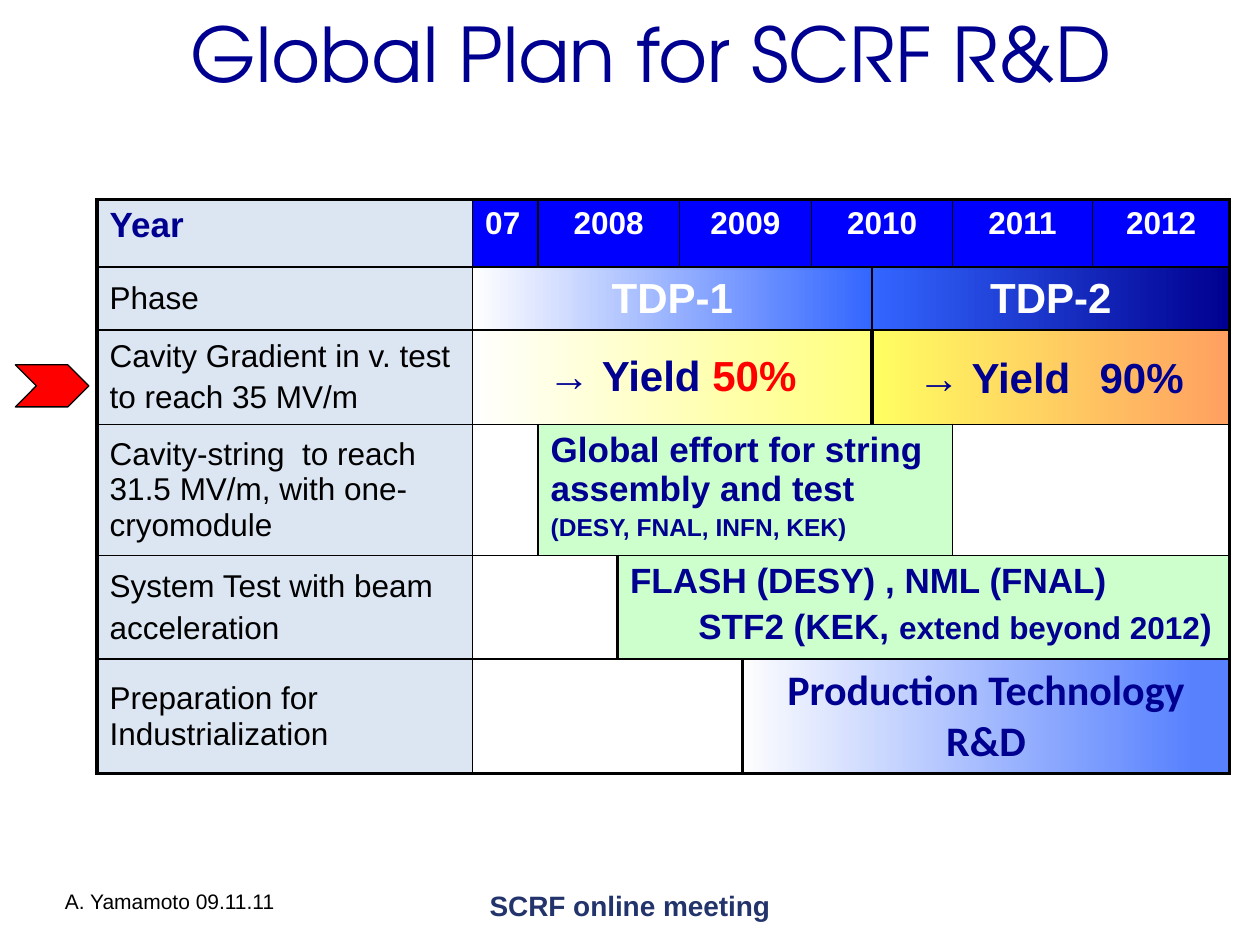
import pptx
import pptx.dml.color
import pptx.enum.shapes
import pptx.enum.text
import pptx.oxml.ns
import pptx.util
import lxml.etree

Pt = pptx.util.Pt
ALIGN = pptx.enum.text.PP_ALIGN
ANCHOR = pptx.enum.text.MSO_ANCHOR
SHAPE = pptx.enum.shapes.MSO_SHAPE
qn = pptx.oxml.ns.qn

COLORS = {
    "navy": "000090", "black": "000000", "white": "FFFFFF", "red": "FF0000",
    "label": "DCE6F2", "year": "0000FF", "azure": "3366FF", "green": "CCFFCC",
    "yellow": "FFFF00", "orange": "FF6600", "footer": "23346C",
}


class Deck:
    """Hold the style and the current slide, and draw its elements."""

    font = "Arial"
    thin, thick = 1, 2.25

    def __init__(self, width, height):
        self.prs = pptx.Presentation()
        self.prs.slide_width, self.prs.slide_height = Pt(width), Pt(height)
        self.s = self.prs.slides.add_slide(self.prs.slide_layouts[6])

    def rgb(self, name):
        return pptx.dml.color.RGBColor.from_string(COLORS[name])

    def add_runs(self, tf, paragraphs, align=ALIGN.LEFT, font=None, indent=0):
        for i, runs in enumerate(paragraphs):
            p = tf.paragraphs[0] if i == 0 else tf.add_paragraph()
            p.alignment = align
            if i > 0:
                p.space_before = Pt(round(runs[0][1] * 0.2, 1))
                if indent:
                    p._p.get_or_add_pPr().set("marL", str(Pt(indent)))
            for text, size, color, bold in runs:
                r = p.add_run()
                r.text = text
                r.font.name = font or self.font
                r.font.size = Pt(size)
                r.font.bold = bold
                r.font.color.rgb = self.rgb(color)

    def text(self, box, runs, align=ALIGN.LEFT, anchor=ANCHOR.TOP, font=None):
        sp = self.s.shapes.add_textbox(*map(Pt, box))
        tf = sp.text_frame
        tf.word_wrap = True
        tf.vertical_anchor = anchor
        self.add_runs(tf, [runs], align, font)

    def chevron(self, box, fill):
        sp = self.s.shapes.add_shape(SHAPE.CHEVRON, *map(Pt, box))
        sp.shadow.inherit = False
        sp.adjustments[0] = 0.5
        sp.fill.solid()
        sp.fill.fore_color.rgb = self.rgb(fill)
        sp.line.color.rgb = self.rgb("black")
        sp.line.width = Pt(0.75)

    def borders(self, cell, widths):
        tcPr = cell._tc.get_or_add_tcPr()
        for side, width in widths.items():
            ln = lxml.etree.SubElement(tcPr, qn(f"a:ln{side}"), w=str(Pt(width)))
            fill = lxml.etree.SubElement(ln, qn("a:solidFill"))
            lxml.etree.SubElement(fill, qn("a:srgbClr"), val=COLORS["black"])

    def gradient(self, fill, start, end, alpha=100, stop=1):
        fill.gradient()
        fill.gradient_angle = 0
        for gs, color, position in zip(fill.gradient_stops, (start, end), (0, stop)):
            gs.color.rgb = self.rgb(color)
            gs.position = position
            if alpha < 100:
                clr = gs._gs.find(qn("a:srgbClr"))
                lxml.etree.SubElement(clr, qn("a:alpha"), val=str(alpha * 1000))

    def paint(self, cell, fill):
        if fill is None:
            cell.fill.background()
        elif isinstance(fill, tuple):
            self.gradient(cell.fill, *fill)
        else:
            cell.fill.solid()
            cell.fill.fore_color.rgb = self.rgb(fill)

    def table(self, left, top, cols, heights, rows, thick_edges):
        nr, nc = len(heights), len(cols)
        frame = self.s.shapes.add_table(
            nr, nc, Pt(left), Pt(top), Pt(sum(cols)), Pt(sum(heights)))
        tbl = frame.table
        tbl.first_row = tbl.horz_banding = False
        for column, width in zip(tbl.columns, cols):
            column.width = Pt(width)
        for row, height in zip(tbl.rows, heights):
            row.height = Pt(height)
        for i, row in enumerate(rows):
            thick_cols = {0, nc} | {k for r, k in thick_edges if r == i}
            j = 0
            for span, fill, anchor, paragraphs, style in row:
                end = j + span
                cell = tbl.cell(i, j)
                if span > 1:
                    cell.merge(tbl.cell(i, end - 1))
                self.borders(cell, {
                    "L": self.thick if j in thick_cols else self.thin,
                    "R": self.thick if end in thick_cols else self.thin,
                    "T": self.thick if i == 0 else self.thin,
                    "B": self.thick if i == nr - 1 else self.thin})
                self.paint(cell, fill)
                cell.vertical_anchor = anchor
                self.add_runs(cell.text_frame, paragraphs, **style)
                j = end

    def save(self):
        self.prs.save("out.pptx")


def item(span, fill=None, paragraphs=(), anchor=ANCHOR.TOP, **style):
    return span, fill, anchor, paragraphs, style


def label(*lines):
    return item(1, "label", [[(t, 18, "black", False)] for t in lines], ANCHOR.MIDDLE)


def year(text, span, align=ALIGN.CENTER):
    return item(span, "year", [[(text, 18, "white", True)]], align=align)


def bar(span, fill, *runs, anchor=ANCHOR.MIDDLE, **style):
    return item(span, fill, [runs], anchor, align=ALIGN.CENTER, **style)


def main():
    deck = Deck(720, 540)
    deck.text((84, 0, 576, 60), [("Global Plan for SCRF R&D", 43, "navy", False)],
              ALIGN.CENTER, ANCHOR.MIDDLE, "TeX Gyre Adventor")

    arrow = ("→ ", 24, "navy", False)
    rows = [
        [item(1, "label", [[("Year", 20, "navy", True)]]),
         year("07", 1, ALIGN.LEFT), year("2008", 2), year("2009", 2),
         year("2010", 2), year("2011", 1), year("2012", 1)],
        [label("Phase"),
         bar(6, ("white", "azure"), ("TDP-1", 24, "white", True)),
         bar(3, ("azure", "navy"), ("TDP-2", 24, "white", True))],
        [label("Cavity Gradient in v. test", "to reach 35 MV/m"),
         bar(6, ("white", "yellow", 51), arrow,
             ("Yield ", 24, "navy", True), ("50%", 24, "red", True)),
         bar(3, ("yellow", "orange", 62), arrow, ("Yield", 24, "navy", True),
             (" ", 36, "navy", True), (" 90%", 24, "navy", True), anchor=ANCHOR.TOP)],
        [label("Cavity-string  to reach 31.5 MV/m, with one-cryomodule"),
         item(1),
         item(6, "green", [
             [("Global effort for string assembly and test", 20, "navy", True)],
             [("(DESY, FNAL, INFN, KEK)", 14, "navy", True)]]),
         item(2, "white")],
        [label("System Test with beam", "acceleration"),
         item(2),
         item(7, "green", [
             [("FLASH (DESY) , NML (FNAL)", 20, "navy", True)],
             [("STF2 (KEK, ", 20, "navy", True),
              ("extend beyond 2012", 18, "navy", True), (")", 20, "navy", True)]],
             indent=39)],
        [label("Preparation for Industrialization"),
         item(4),
         bar(5, ("white", "azure", 81, 0.92),
             ("Production Technology R&D", 24, "navy", True),
             anchor=ANCHOR.TOP, font="Calibri")],
    ]
    cols = [214.6, 37.4, 45.4, 35.3, 36, 39.6, 34.5, 46.1, 79.9, 78.5]
    heights = [38.5, 33.5, 51.5, 70.5, 56, 65.5]
    deck.table(55.5, 114, cols, heights, rows, {(2, 7), (4, 3), (5, 5)})

    deck.text((30, 504, 192, 36), [("A. Yamamoto 09.11.11", 12, "black", False)])
    deck.text((246, 504, 228, 36), [("SCRF online meeting", 16, "footer", True)],
              ALIGN.CENTER)
    deck.chevron((8.8, 208.5, 42, 24), "red")
    deck.save()


if __name__ == "__main__":
    main()
